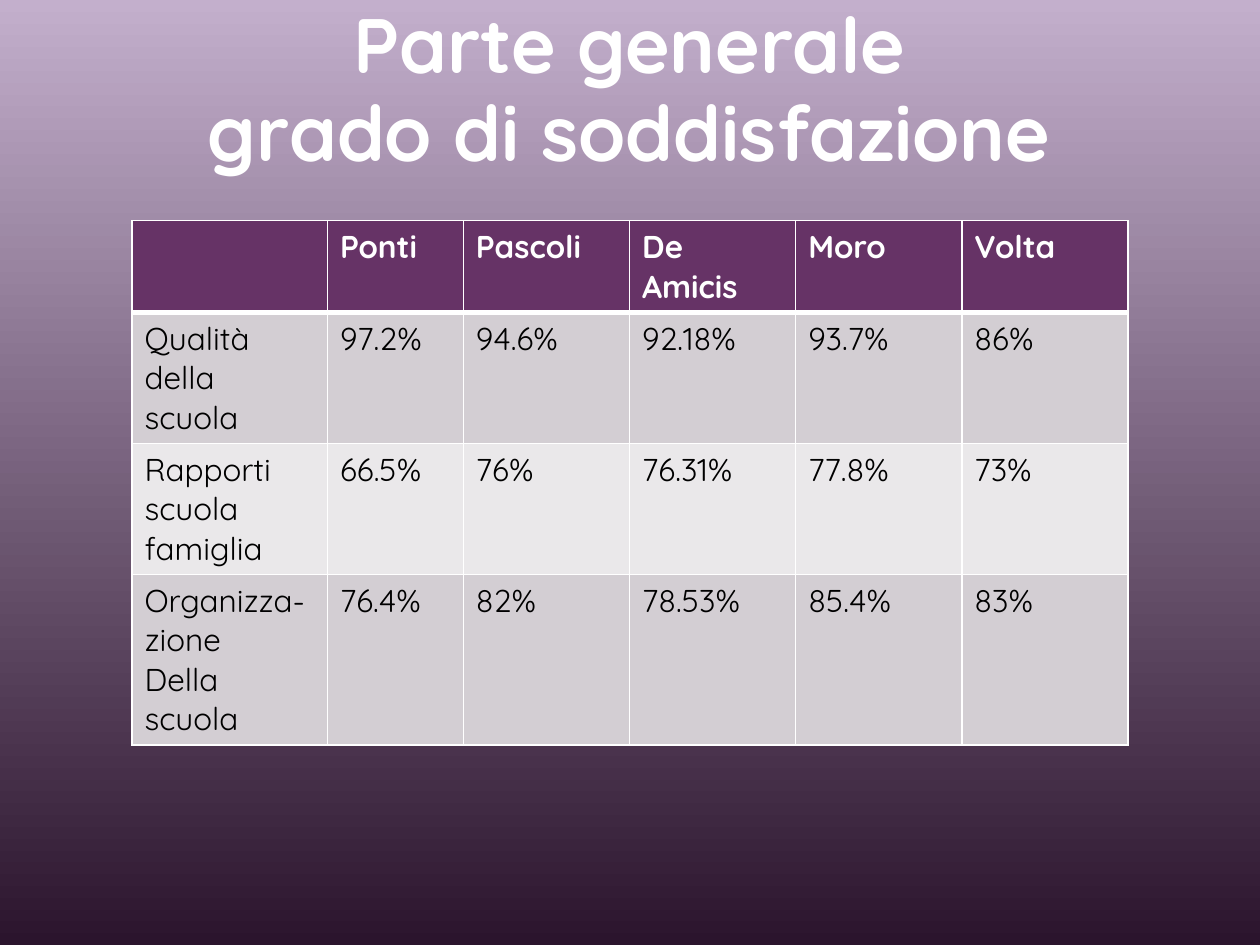
from dataclasses import dataclass

from lxml import etree
from pptx import Presentation
from pptx.dml.color import RGBColor
from pptx.enum.text import MSO_ANCHOR, MSO_AUTO_SIZE, PP_ALIGN
from pptx.oxml.ns import qn
from pptx.util import Cm, Pt

CENTER = PP_ALIGN.CENTER
MIDDLE = MSO_ANCHOR.MIDDLE
NO_FIT = MSO_AUTO_SIZE.NONE


@dataclass(frozen=True)
class Theme:
    font: str = "Quicksand"
    white: str = "FFFFFF"
    black: str = "000000"
    header: str = "663366"
    bands: tuple = ("D3CED3", "EAE8EA")
    gradient: tuple = ("C3AFCC", "2B142D")
    title_size: int = 44
    table_size: int = 18
    border: int = 1
    header_rule: int = 3


THEME = Theme()
TITLE = "Parte generale\vgrado di soddisfazione"
ROWS = [
    ["", "Ponti", "Pascoli", "De Amicis", "Moro", "Volta"],
    ["Qualità\ndella\nscuola", "97.2%", "94.6%", "92.18%", "93.7%", "86%"],
    ["Rapporti\nscuola\nfamiglia", "66.5%", "76%", "76.31%", "77.8%", "73%"],
    ["Organizza-zione\nDella\nscuola", "76.4%", "82%", "78.53%", "85.4%", "83%"],
]
COL_WIDTHS = [3.94, 2.74] + [3.35] * 4
ROW_HEIGHT = 1.03


def set_attrs(obj, values):
    for name, value in values.items():
        setattr(obj, name, value)


def set_font(font, size, color, bold):
    set_attrs(font, {"name": THEME.font, "size": Pt(size), "bold": bold})
    font.color.rgb = RGBColor.from_string(color)


def set_background(s):
    fill = s.background.fill
    fill.gradient()
    fill.gradient_angle = 270
    for stop, color, position in zip(fill.gradient_stops, THEME.gradient, (0, 1)):
        stop.color.rgb = RGBColor.from_string(color)
        stop.position = position


def add_title(s, left, top, width, height):
    sp = s.shapes.title
    set_attrs(sp, {"left": Cm(left), "top": Cm(top),
                   "width": Cm(width), "height": Cm(height)})
    tf = sp.text_frame
    set_attrs(tf, {"text": TITLE, "word_wrap": True,
                   "auto_size": NO_FIT, "vertical_anchor": MIDDLE})
    p = tf.paragraphs[0]
    set_attrs(p, {"alignment": CENTER, "line_spacing": 0.95})
    for r in p.runs:
        set_font(r.font, THEME.title_size, THEME.white, True)


def set_borders(cell, bottom):
    tc_pr = cell._tc.get_or_add_tcPr()
    widths = {"lnL": THEME.border, "lnR": THEME.border,
              "lnT": THEME.border, "lnB": bottom}
    for i, (tag, width) in enumerate(widths.items()):
        ln = etree.Element(qn(f"a:{tag}"), w=str(Pt(width)))
        fill = etree.SubElement(ln, qn("a:solidFill"))
        etree.SubElement(fill, qn("a:srgbClr"), val=THEME.white)
        tc_pr.insert(i, ln)


def format_cell(cell, text, row):
    is_header = row == 0
    cell.text = text
    cell.fill.solid()
    fill = THEME.header if is_header else THEME.bands[(row - 1) % 2]
    cell.fill.fore_color.rgb = RGBColor.from_string(fill)
    color = THEME.white if is_header else THEME.black
    for p in cell.text_frame.paragraphs:
        set_font(p.font, THEME.table_size, color, is_header)
        for r in p.runs:
            set_font(r.font, THEME.table_size, color, is_header)
    set_borders(cell, THEME.header_rule if row < 1 else THEME.border)


def add_results_table(s, left, top, width, height):
    frame = s.shapes.add_table(len(ROWS), len(COL_WIDTHS), Cm(left), Cm(top),
                               Cm(width), Cm(height))
    table = frame.table
    for col, col_width in zip(table.columns, COL_WIDTHS):
        col.width = Cm(col_width)
    for i, (row, values) in enumerate(zip(table.rows, ROWS)):
        row.height = Cm(ROW_HEIGHT)
        for cell, text in zip(row.cells, values):
            format_cell(cell, text, i)
    frame.height = Cm(height)


def main():
    prs = Presentation()
    set_attrs(prs, {"slide_width": Cm(25.4), "slide_height": Cm(19.05)})
    s = prs.slides.add_slide(prs.slide_layouts[5])
    set_background(s)
    add_title(s, 2.16, 0.25, 21.06, 3.18)
    add_results_table(s, 2.66, 4.45, sum(COL_WIDTHS), 10.16)
    prs.save("out.pptx")


if __name__ == "__main__":
    main()
